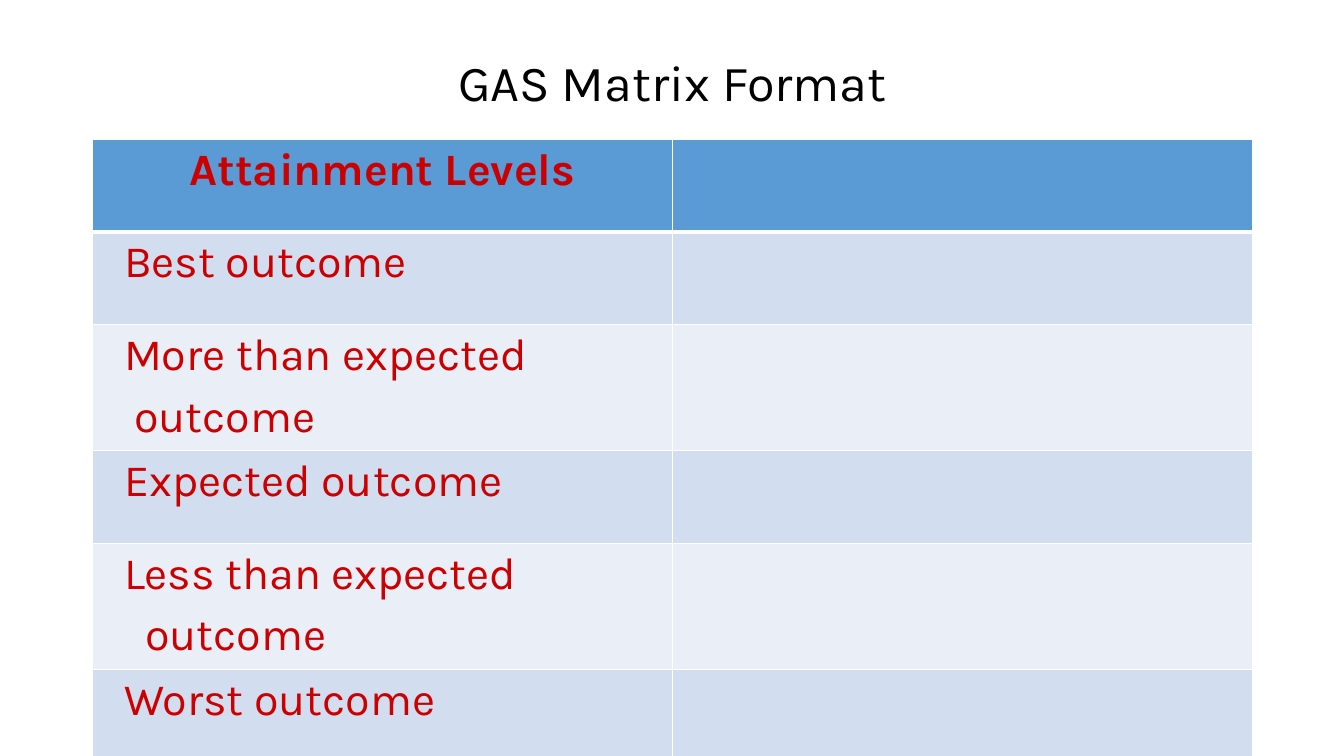
from lxml.etree import SubElement
from pptx import Presentation
from pptx.dml.color import RGBColor as RGB
from pptx.enum.text import MSO_ANCHOR as Anchor, PP_ALIGN as Align
from pptx.oxml.ns import qn
from pptx.util import Inches, Pt

TITLE = "GAS Matrix Format"
HEADER = "Attainment Levels"
# Each level is a list of (line, left indent in inches)
LEVELS = [
    [("Best outcome", 0.21)],
    [("More than expected", 0.21), ("outcome", 0.31)],
    [("Expected outcome", 0.21)],
    [("Less than expected", 0.21), ("outcome", 0.42)],
    [("Worst outcome", 0.21)],
]

THEME = {
    "font": "Karla", "title_size": 36, "cell_size": 32,
    "title": "000000", "text": "CC0000", "border": "FFFFFF",
    "header": "5B9BD5", "bands": ("D2DEEF", "EAEFF7"),
}
LEFT, WIDTH = 0.92, 11.5
TITLE_TOP, TITLE_HEIGHT = 0.4, 0.9
TABLE_TOP, COLUMNS = 1.38, 2
ROW_HEIGHTS = {1: 0.92, 2: 1.25}  # by number of text lines


def add_text(p, text, size, color, bold=False):
    r = p.add_run()
    r.text = text
    formats = {"name": THEME["font"], "size": Pt(size), "bold": bold}
    for name, value in formats.items():
        setattr(r.font, name, value)
    r.font.color.rgb = RGB.from_string(color)


def add_borders(cell, widths):
    """Draw solid borders; widths maps the sides L, R, T, B to points."""
    tc_pr = cell._tc.get_or_add_tcPr()
    for side, width in widths.items():
        ln = SubElement(tc_pr, qn(f"a:ln{side}"), w=str(Pt(width)))
        fill = SubElement(ln, qn("a:solidFill"))
        SubElement(fill, qn("a:srgbClr"), val=THEME["border"])


def add_title(slide):
    sp = slide.shapes.title
    box = {"left": LEFT, "top": TITLE_TOP, "width": WIDTH, "height": TITLE_HEIGHT}
    for name, value in box.items():
        setattr(sp, name, Inches(value))
    tf = sp.text_frame
    tf.vertical_anchor = Anchor.MIDDLE
    p = tf.paragraphs[0]
    p.alignment, p.line_spacing = Align.CENTER, 0.9
    add_text(p, TITLE, THEME["title_size"], THEME["title"])


def fill_label(cell, lines, is_header):
    tf = cell.text_frame
    for i, (line, indent) in enumerate(lines):
        p = tf.add_paragraph() if i else tf.paragraphs[0]
        p.alignment = Align.CENTER if is_header else Align.LEFT
        p.space_before = Pt(0.2 * THEME["cell_size"])
        p._p.get_or_add_pPr().set("marL", str(Inches(indent)))
        add_text(p, line, THEME["cell_size"], THEME["text"], is_header)


def add_matrix(slide):
    rows = [[(HEADER, 0)], *LEVELS]
    heights = [ROW_HEIGHTS[len(lines)] for lines in rows]
    table = slide.shapes.add_table(
        len(rows), COLUMNS, Inches(LEFT), Inches(TABLE_TOP),
        Inches(WIDTH), Inches(sum(heights))).table
    for column in table.columns:
        column.width = Inches(WIDTH / COLUMNS)
    for i, lines in enumerate(rows):
        table.rows[i].height = Inches(heights[i])
        color = THEME["bands"][(i - 1) % 2] if i else THEME["header"]
        widths = {"L": 1, "R": 1, "T": 3 if i == 1 else 1, "B": 1 if i else 3}
        for cell in table.rows[i].cells:
            add_borders(cell, widths)
            cell.fill.solid()
            cell.fill.fore_color.rgb = RGB.from_string(color)
        fill_label(table.cell(i, 0), lines, i == 0)


def main():
    prs = Presentation()
    prs.slide_width, prs.slide_height = Inches(13.33), Inches(7.5)
    slide = prs.slides.add_slide(prs.slide_layouts[5])
    add_title(slide)
    add_matrix(slide)
    prs.save("out.pptx")


if __name__ == "__main__":
    main()
